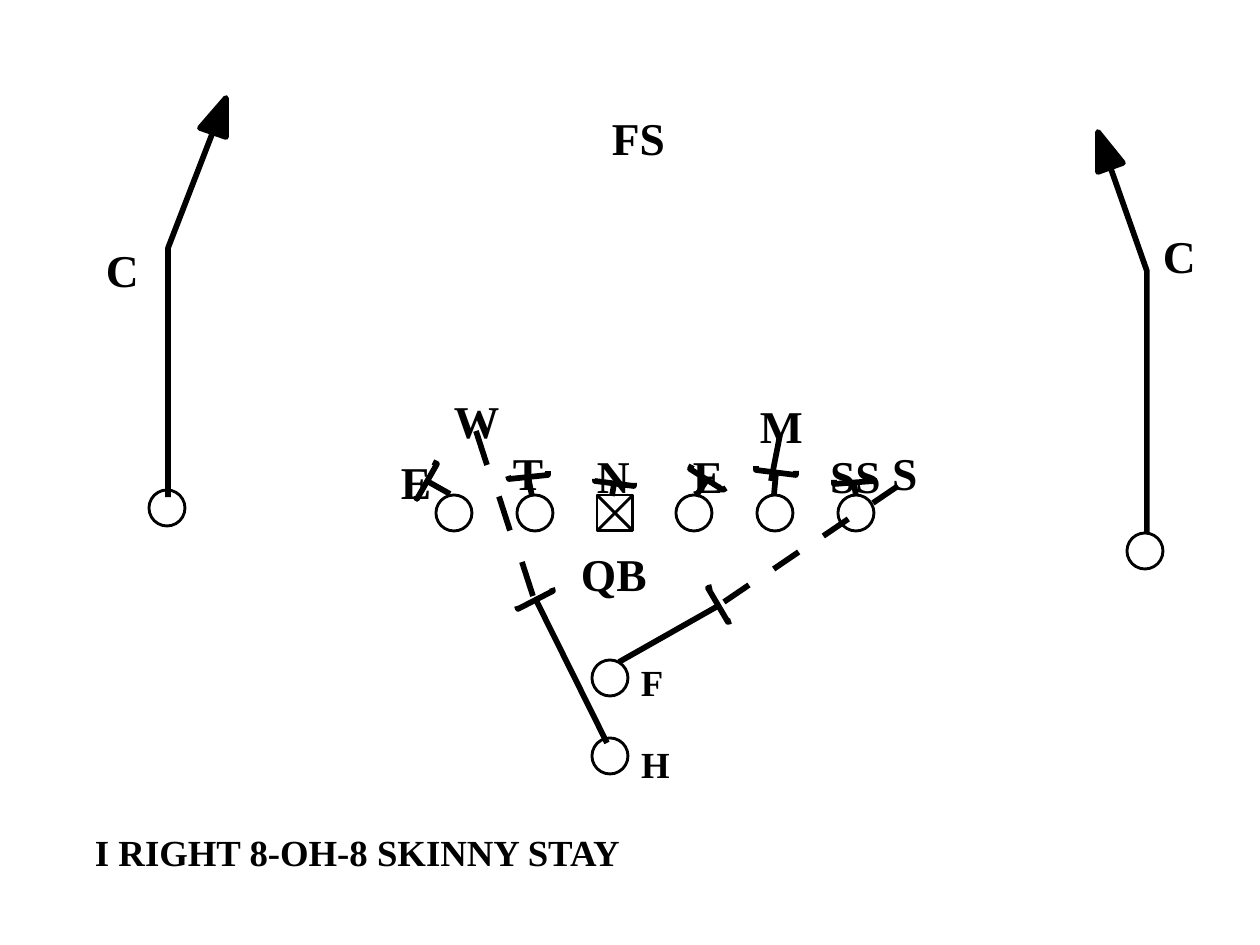
import pptx
import pptx.util
import pptx.dml.color
import pptx.enum.shapes
import pptx.enum.text
import pptx.oxml.ns
import lxml.etree

PX = 914400 / 126
INK = {"black": "000000", "white": "FFFFFF"}
FONT = "Times New Roman"
THIN, THICK = 1.63, 3.25
SIZE = 36

# text, left, top, width, height
SMALL = [
    ("H", 641, 738, 47, 52),
    ("F", 641, 656, 40, 52),
    ("I RIGHT 8-OH-8 SKINNY STAY", 95, 830, 533, 44),
]
BIG = [
    ("E", 401, 450, 50, 62), ("N", 597, 444, 52, 62),
    ("T", 513, 441, 50, 62), ("W", 454, 389, 66, 62),
    ("M", 760, 394, 63, 62), ("S", 892, 441, 45, 62),
    ("E", 693, 444, 50, 62), ("QB", 581, 542, 86, 62),
    ("C", 106, 238, 52, 62), ("C", 1163, 224, 52, 62),
    ("FS", 612, 106, 73, 62), ("SS", 830, 444, 71, 62),
]

LINE_Y = 495
LINEMEN = [436, 517, 676, 757, 838]
BACKS = [(149, 490), (1127, 533), (592, 660), (592, 738)]
CENTER = (597, LINE_Y)

# stem start, stem end, bar corners
BLOCKS = [
    ((532, 496), (528, 476), [(548, 471), (548, 475), (509, 479), (508, 476)]),
    ((450, 494), (427, 481), [(433, 462), (437, 464), (417, 499), (415, 496)]),
    ((612, 496), (614, 484), [(634, 483), (634, 486), (595, 481), (595, 479)]),
    ((696, 496), (707, 480), [(726, 488), (723, 490), (690, 469), (692, 465)]),
    ((856, 496), (854, 483), [(874, 478), (874, 481), (834, 484), (834, 480)]),
    ((774, 495), (776, 473), [(796, 471), (796, 475), (756, 470), (756, 466)]),
    ((619, 662), (718, 606), [(731, 621), (728, 622), (708, 588), (712, 587)]),
    ((607, 743), (536, 600), [(552, 588), (553, 591), (518, 609), (517, 606)]),
]
MIKE = ((780, 435), (771, 481))

# first start, last start, dash vector, count
DASHES = [
    ((724, 602), (873, 503), (25, -17), 4),
    ((476, 431), (522, 562), (11, 34), 3),
]

# route points, arrowhead corners
ROUTES = [
    ([(168, 497), (168, 248), (226, 98)], [(226, 98), (200, 128), (226, 137)]),
    ([(1147, 532), (1147, 271), (1098, 132)],
     [(1098, 132), (1098, 172), (1123, 163)]),
]


def emu(n):
    return pptx.util.Emu(round(n * PX))


def color(name):
    return pptx.dml.color.RGBColor.from_string(INK[name])


def add_sub(node, tag):
    lxml.etree.SubElement(node, pptx.oxml.ns.qn(tag))


def style(shape, width, fill=None):
    shape.shadow.inherit = False
    shape.line.color.rgb = color("black")
    shape.line.width = pptx.util.Pt(width)
    if fill:
        shape.fill.solid()
        shape.fill.fore_color.rgb = color(fill)
    else:
        shape.fill.background()


def text(words, x, y, w, h, *, size, bold=True, ink="black"):
    box = slide.shapes.add_textbox(emu(x), emu(y), emu(w), emu(h))
    frame = box.text_frame
    frame.margin_left = frame.margin_right = 0
    frame.margin_top = frame.margin_bottom = 0
    frame.word_wrap = True
    frame.vertical_anchor = pptx.enum.text.MSO_ANCHOR.MIDDLE
    run = frame.paragraphs[0].add_run()
    run.text = words
    run.font.name = FONT
    run.font.size = pptx.util.Pt(size)
    run.font.bold = bold
    run.font.color.rgb = color(ink)


def mark(x, y, kind="OVAL"):
    """Draw one player's symbol."""
    preset = getattr(pptx.enum.shapes.MSO_SHAPE, kind)
    shape = slide.shapes.add_shape(preset, emu(x), emu(y), emu(SIZE), emu(SIZE))
    style(shape, THIN, "white")


def line(start, end, width=THICK):
    link = slide.shapes.add_connector(
        pptx.enum.shapes.MSO_CONNECTOR.STRAIGHT,
        *(emu(n) for n in (*start, *end)))
    link.line.color.rgb = color("black")
    link.line.width = pptx.util.Pt(width)
    add_sub(link._element.spPr, "a:effectLst")


def outline(points, fill=None):
    """Draw a rounded path, closed only when it is filled."""
    pen = slide.shapes.build_freeform(*points[0], scale=PX)
    pen.add_line_segments(points[1:], close=bool(fill))
    shape = pen.convert_to_shape()
    style(shape, THICK, fill)
    add_sub(shape.line._get_or_add_ln(), "a:round")


deck = pptx.Presentation()
deck.slide_width, deck.slide_height = emu(1260), emu(945)
slide = deck.slides.add_slide(deck.slide_layouts[6])

for size, labels in ((21, SMALL), (26, BIG)):
    for label in labels:
        text(*label, size=size)

for spot in BACKS + [(x, LINE_Y) for x in LINEMEN]:
    mark(*spot)

mark(*CENTER, kind="RECTANGLE")
left, top = CENTER
right, base = left + SIZE, top + SIZE
line((left, top), (right, base), THIN)
line((left, base), (right, top), THIN)

for start, end, bar in BLOCKS:
    line(start, end)
    outline(bar)
line(*MIKE)

for (x, y), (far_x, far_y), (dx, dy), count in DASHES:
    for i in range(count):
        part = i / (count - 1)
        a, b = x + (far_x - x) * part, y + (far_y - y) * part
        line((a, b), (a + dx, b + dy))

for path, head in ROUTES:
    outline(path)
    outline(head, "black")

deck.save("out.pptx")
